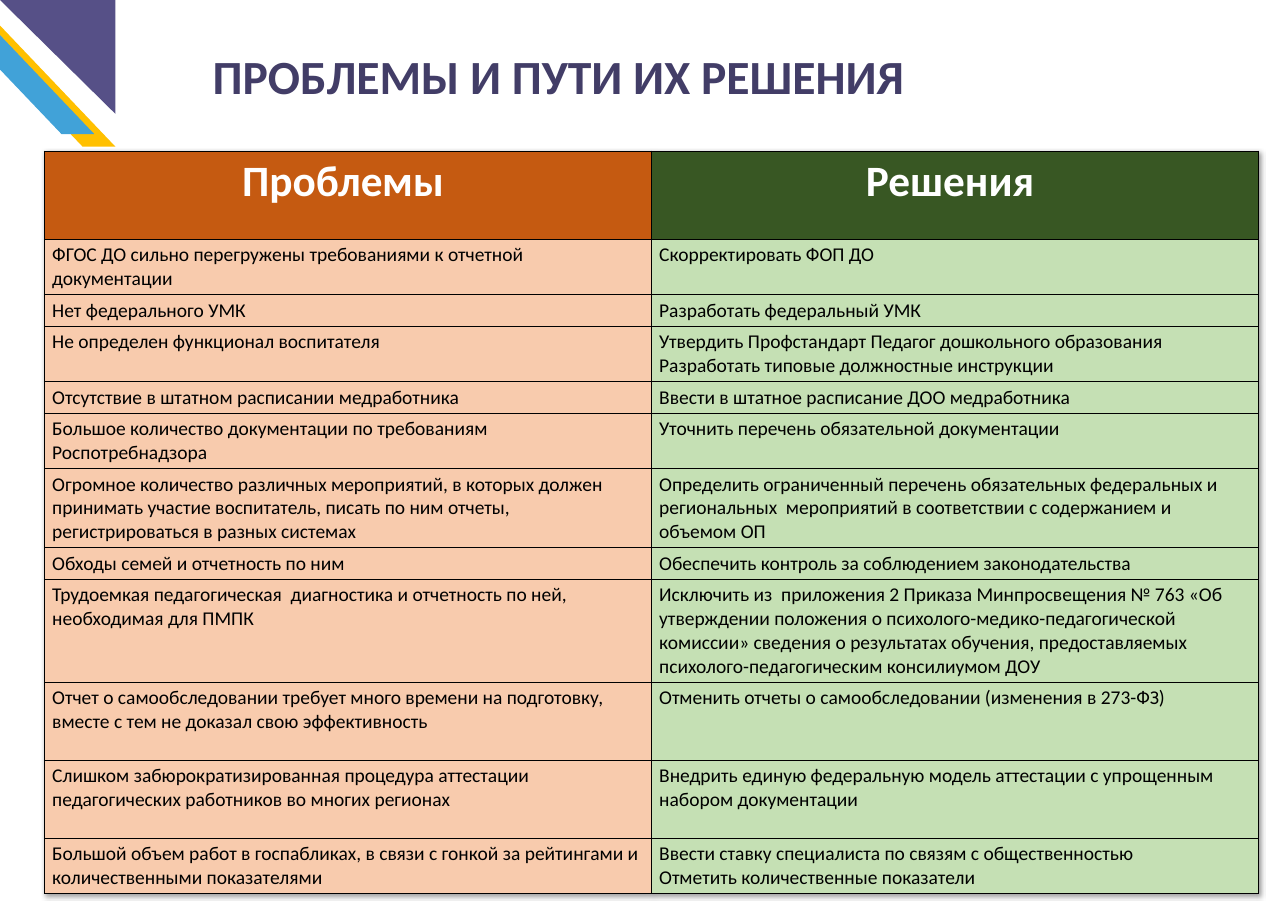
from lxml import etree
from pptx import Presentation
from pptx.dml.color import RGBColor
from pptx.enum.shapes import MSO_SHAPE
from pptx.enum.text import MSO_ANCHOR, MSO_AUTO_SIZE, PP_ALIGN
from pptx.oxml import parse_xml
from pptx.oxml.ns import qn
from pptx.util import Inches, Pt

PARALLELOGRAM, TRIANGLE = MSO_SHAPE.PARALLELOGRAM, MSO_SHAPE.RIGHT_TRIANGLE
LEFT, CENTER = PP_ALIGN.LEFT, PP_ALIGN.CENTER
MIDDLE = MSO_ANCHOR.MIDDLE
NO_AUTOFIT = MSO_AUTO_SIZE.NONE
TITLE_ONLY = 5
DRAWING = "http://schemas.openxmlformats.org/drawingml/2006/main"
FONT = "Calibri"

HEADINGS = ("Проблемы ", "Решения ")
HEADING_FILLS = ("C55A11", "385723")
BODY_FILLS = ("F8CBAD", "C5E0B4")
HEADING_HEIGHT = 1.13

# Row height, problem, solution
ROWS = [
    (0.7, "ФГОС ДО сильно перегружены требованиями к отчетной документации",
     "Скорректировать ФОП ДО"),
    (0.4, "Нет федерального УМК", "Разработать федеральный УМК"),
    (0.7, "Не определен функционал воспитателя",
     "Утвердить Профстандарт Педагог дошкольного образования\n"
     "Разработать типовые должностные инструкции"),
    (0.4, "Отсутствие в штатном расписании медработника",
     "Ввести в штатное расписание ДОО медработника"),
    (0.7, "Большое количество документации по требованиям Роспотребнадзора",
     "Уточнить перечень обязательной документации"),
    (1.0, "Огромное количество различных мероприятий, в которых должен принимать "
     "участие воспитатель, писать по ним отчеты, регистрироваться в разных системах",
     "Определить ограниченный перечень обязательных федеральных и региональных  "
     "мероприятий в соответствии с содержанием и объемом ОП"),
    (0.4, "Обходы семей и отчетность по ним",
     "Обеспечить контроль за соблюдением законодательства"),
    (1.31, "Трудоемкая педагогическая  диагностика и отчетность по ней, "
     "необходимая для ПМПК",
     "Исключить из  приложения 2 Приказа Минпросвещения № 763 «Об утверждении "
     "положения о психолого-медико-педагогической комиссии» сведения о результатах "
     "обучения, предоставляемых психолого-педагогическим консилиумом ДОУ"),
    (1.0, "Отчет о самообследовании требует много времени на подготовку, "
     "вместе с тем не доказал свою эффективность",
     "Отменить отчеты о самообследовании (изменения в 273-ФЗ)"),
    (1.0, "Слишком забюрократизированная процедура аттестации педагогических "
     "работников во многих регионах",
     "Внедрить единую федеральную модель аттестации с упрощенным набором документации"),
    (0.7, "Большой объем работ в госпабликах, в связи с гонкой за рейтингами и "
     "количественными показателями",
     "Ввести ставку специалиста по связям с общественностью\n"
     "Отметить количественные показатели"),
]


def color(value):
    return RGBColor.from_string(value)


def write(frame, text, size=18, fill="000000", bold=False, align=LEFT):
    frame.word_wrap = True
    for index, line in enumerate(text.split("\n")):
        para = frame.add_paragraph() if index else frame.paragraphs[0]
        para.alignment = align
        span = para.add_run()
        span.text = line
        span.font.name = FONT
        span.font.size = Pt(size)
        span.font.bold = bold
        span.font.color.rgb = color(fill)


def add_corner(page, kind, left, top, width, height, fill):
    shape = page.shapes.add_shape(
        kind, Inches(left), Inches(top), Inches(width), Inches(height))
    shape.shadow.inherit = False
    shape.fill.solid()
    shape.fill.fore_color.rgb = color(fill)
    shape.line.fill.background()
    return shape


def add_stripe(page, left, top, fill):
    stripe = add_corner(page, PARALLELOGRAM, left, top, 2.27, 1.94, fill)
    stripe.adjustments[0] = 0.953
    stripe._element.spPr.find(qn("a:xfrm")).set("flipH", "1")


def add_title(page, text):
    title = page.shapes.title
    title.left, title.top = Inches(2.63), Inches(0.55)
    title.width, title.height = Inches(12.36), Inches(0.84)
    title.text_frame.auto_size = NO_AUTOFIT
    title.text_frame.vertical_anchor = MIDDLE
    write(title.text_frame, text, size=44, fill="423D67", bold=True)


def format_cell(cell, fill):
    properties = cell._tc.get_or_add_tcPr()
    for side in ("lnL", "lnR", "lnT", "lnB"):
        border = etree.SubElement(properties, qn(f"a:{side}"), w=str(Pt(1)))
        solid = etree.SubElement(border, qn("a:solidFill"))
        etree.SubElement(solid, qn("a:srgbClr"), val="000000")
    cell.fill.solid()
    cell.fill.fore_color.rgb = color(fill)


def add_table_shadow(table):
    table._tbl.tblPr.insert(0, parse_xml(
        f'<a:effectLst xmlns:a="{DRAWING}">'
        '<a:outerShdw blurRad="50800" dist="38100" dir="2700000" algn="tl">'
        '<a:srgbClr val="000000"><a:alpha val="40000"/></a:srgbClr>'
        '</a:outerShdw></a:effectLst>'))


def add_problem_table(page):
    heights = [HEADING_HEIGHT] + [row[0] for row in ROWS]
    table = page.shapes.add_table(
        len(heights), len(HEADINGS), Inches(0.57), Inches(1.94),
        Inches(15.58), Inches(sum(heights))).table
    table.horz_banding = False
    add_table_shadow(table)
    for row, height in zip(table.rows, heights):
        row.height = Inches(height)
    for column, heading in enumerate(HEADINGS):
        cell = table.cell(0, column)
        format_cell(cell, HEADING_FILLS[column])
        write(cell.text_frame, heading, size=40, fill="FFFFFF", bold=True, align=CENTER)
        for index, row in enumerate(ROWS, start=1):
            cell = table.cell(index, column)
            format_cell(cell, BODY_FILLS[column])
            write(cell.text_frame, row[column + 1])


def main():
    deck = Presentation()
    deck.slide_width, deck.slide_height = Inches(16.53), Inches(11.69)
    page = deck.slides.add_slide(deck.slide_layouts[TITLE_ONLY])

    # Corner decoration
    add_stripe(page, -0.79, -0.06, "FFC000")
    add_stripe(page, -1.06, -0.22, "41A2D8")
    triangle = add_corner(page, TRIANGLE, 0, 0, 1.48, 1.46, "565087")
    triangle.rotation = 180

    # Title and table
    add_title(page, "ПРОБЛЕМЫ И ПУТИ ИХ РЕШЕНИЯ")
    add_problem_table(page)
    deck.save("out.pptx")


if __name__ == "__main__":
    main()
